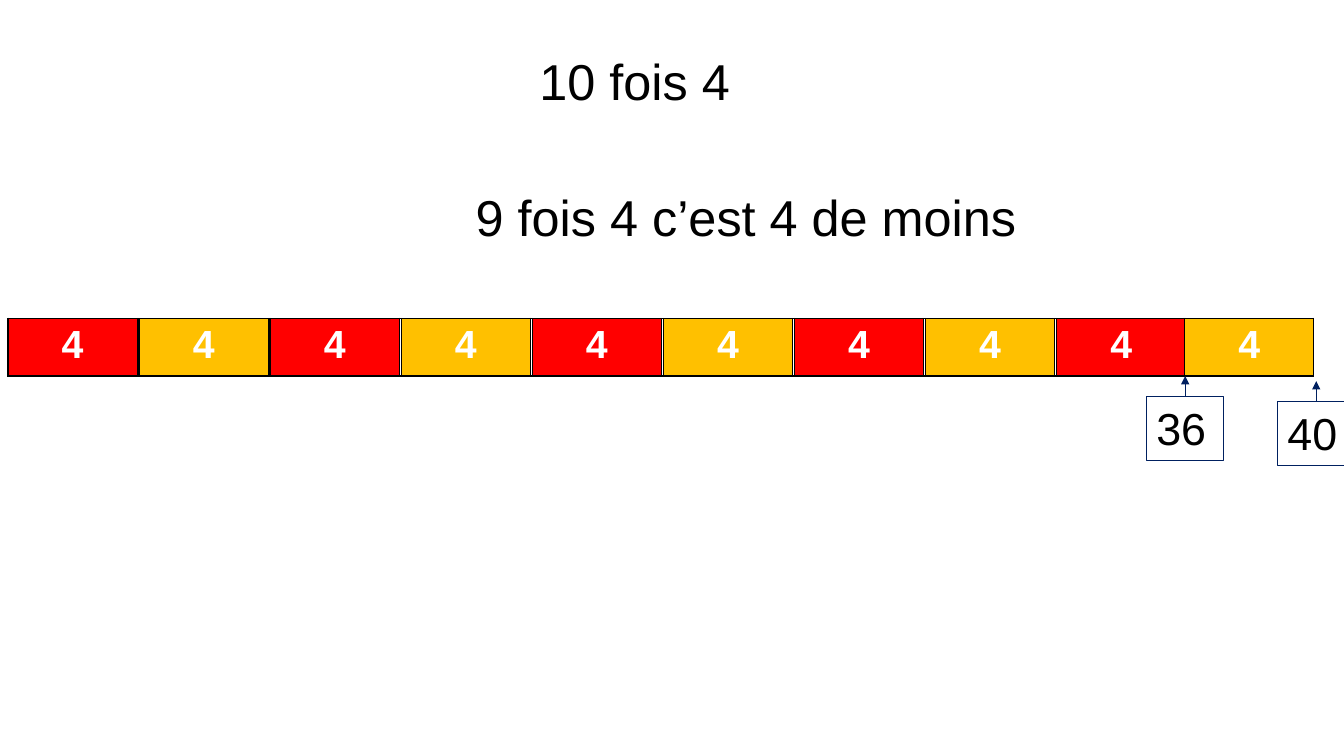
import pptx
import pptx.dml.color
import pptx.enum.shapes
import pptx.enum.text
import pptx.oxml
import pptx.oxml.ns
import pptx.util
from pptx.util import Inches

RGBColor = pptx.dml.color.RGBColor
BLACK = RGBColor(0x00, 0x00, 0x00)
WHITE = RGBColor(0xFF, 0xFF, 0xFF)
RED = RGBColor(0xFF, 0x00, 0x00)
AMBER = RGBColor(0xFF, 0xC0, 0x00)
NAVY = RGBColor(0x00, 0x20, 0x60)

FONT = "Arial"
DRAWING = pptx.oxml.ns.nsdecls("a")
BLOCKS = 10
PITCH = 1.3
BLOCK_WIDTH = 1.28
LAST_STEP = 1.27  # the tenth block touches the ninth


def write(frame, text, size, color, bold=False, align=pptx.enum.text.PP_ALIGN.LEFT):
    frame.text = text
    para = frame.paragraphs[0]
    para.alignment = align
    para.font.name = FONT
    para.font.size = pptx.util.Pt(size)
    para.font.bold = bold
    para.font.color.rgb = color


def border_cell(cell):
    properties = cell._tc.get_or_add_tcPr()
    for position, side in enumerate(("lnL", "lnR", "lnT", "lnB")):
        properties.insert(position, pptx.oxml.parse_xml(
            f'<a:{side} {DRAWING} w="12700"><a:solidFill><a:srgbClr val="{BLACK}"/>'
            f'</a:solidFill></a:{side}>'))


def add_strip(page, left, top, width, height, columns=1):
    table = page.shapes.add_table(1, columns, Inches(left), Inches(top),
                                  Inches(width), Inches(height)).table
    table.first_row = False
    table.horz_banding = False
    for cell in table.iter_cells():
        cell.fill.background()
        border_cell(cell)
    return table


def add_heading(box, text, left, top, width, height):
    box.left, box.top = Inches(left), Inches(top)
    box.width, box.height = Inches(width), Inches(height)
    frame = box.text_frame
    frame.word_wrap = True
    frame.auto_size = pptx.enum.text.MSO_AUTO_SIZE.NONE
    frame.vertical_anchor = pptx.enum.text.MSO_ANCHOR.TOP
    write(frame, text, 36, BLACK)
    frame.paragraphs[0].line_spacing = 1.0
    frame.paragraphs[0].space_before = pptx.util.Pt(0)


def add_number_bar(page, left, top, width, height):
    # Empty grid behind the coloured blocks
    add_strip(page, left, top, width, height, BLOCKS)

    # Alternating blocks of four
    for index in range(BLOCKS):
        offset = index * PITCH
        if index == BLOCKS - 1:
            offset = (index - 1) * PITCH + LAST_STEP
        cell = add_strip(page, left + offset, top, BLOCK_WIDTH, height).cell(0, 0)
        cell.fill.solid()
        cell.fill.fore_color.rgb = AMBER if index % 2 else RED
        write(cell.text_frame, "4", 28, WHITE, True, pptx.enum.text.PP_ALIGN.CENTER)


def add_marker(page, text, left, top, width, height):
    group = page.shapes.add_group_shape()

    # Framed total
    box = group.shapes.add_shape(pptx.enum.shapes.MSO_SHAPE.RECTANGLE, Inches(left),
                                 Inches(top), Inches(width), Inches(height))
    box.shadow.inherit = False
    box.fill.background()
    box.line.color.rgb = NAVY
    box.line.width = pptx.util.Pt(0.75)
    box.text_frame.word_wrap = True
    box.text_frame.vertical_anchor = pptx.enum.text.MSO_ANCHOR.TOP
    write(box.text_frame, text, 32, BLACK)

    # Arrow up to the bar
    middle = Inches(left + width / 2)
    arrow = group.shapes.add_connector(pptx.enum.shapes.MSO_CONNECTOR.STRAIGHT,
                                       middle, Inches(top), middle, Inches(top - 0.2))
    arrow.line.color.rgb = NAVY
    arrow.line.width = pptx.util.Pt(0.75)
    arrow.line._get_or_add_ln().append(
        pptx.oxml.parse_xml(f'<a:tailEnd {DRAWING} type="triangle"/>'))
    arrow._element.spPr.append(pptx.oxml.parse_xml(f"<a:effectLst {DRAWING}/>"))


def build_multiplication_slide(deck):
    page = deck.slides.add_slide(deck.slide_layouts[5])
    add_number_bar(page, 0.08, 3.16, 12.95, 0.57)
    add_heading(page.shapes.title, "10 fois 4", 5.25, 0.45, 2.81, 0.71)
    add_marker(page, "40", 12.67, 3.98, 0.77, 0.64)
    sentence = page.shapes.add_textbox(0, 0, 0, 0)
    add_heading(sentence, "9 fois 4 c’est 4 de moins", 4.62, 1.8, 6.61, 0.71)
    add_marker(page, "36", 11.37, 3.93, 0.77, 0.64)


def main():
    deck = pptx.Presentation()
    deck.slide_width = Inches(13.33)
    deck.slide_height = Inches(7.5)
    build_multiplication_slide(deck)
    deck.save("out.pptx")


if __name__ == "__main__":
    main()
